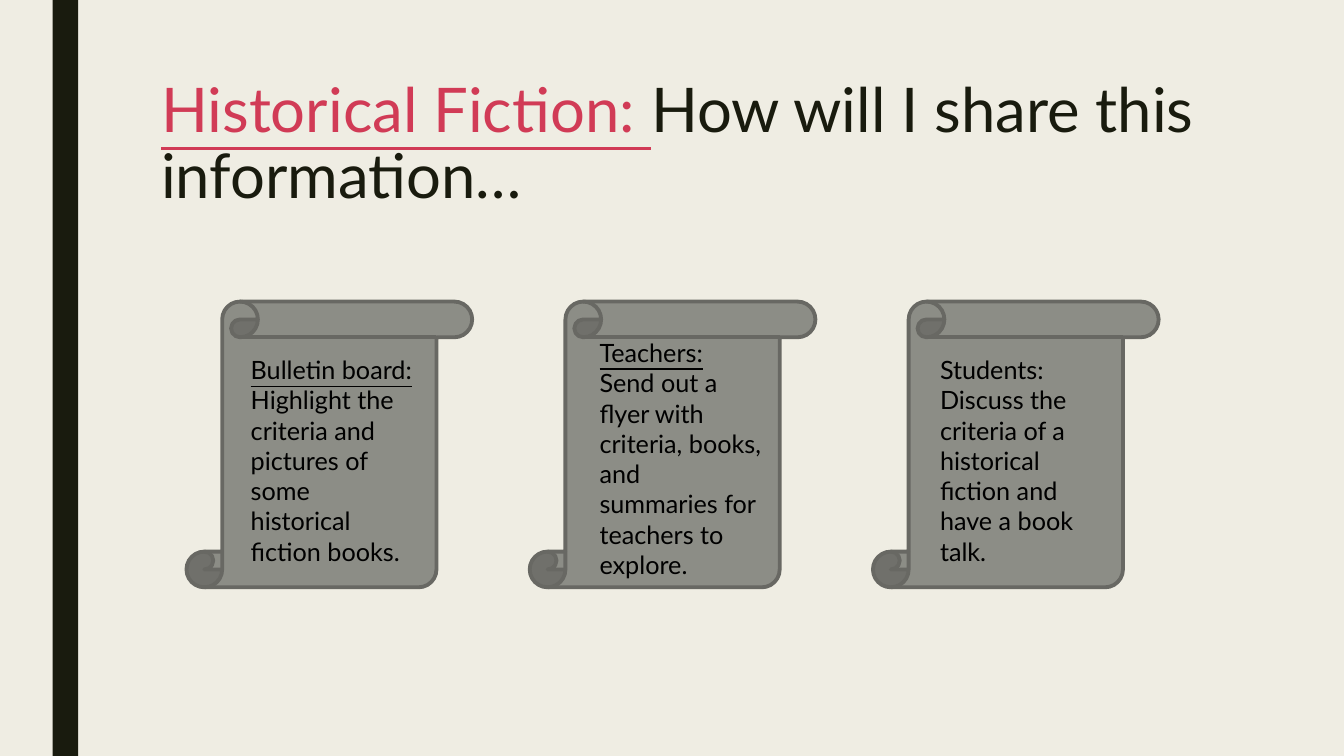
from pptx import Presentation
from pptx.dml.color import RGBColor
from pptx.enum.shapes import MSO_SHAPE
from pptx.enum.text import MSO_ANCHOR
from pptx.util import Cm, Pt

CREAM = RGBColor(0xEF, 0xED, 0xE3)
DARK = RGBColor(0x19, 0x1B, 0x0E)
RED = RGBColor(0xD1, 0x3B, 0x56)
GRAY = RGBColor(0x8C, 0x8D, 0x86)
EDGE = RGBColor(0x68, 0x68, 0x63)
BLACK = RGBColor(0, 0, 0)

SCROLL_LEFT, SCROLL_TOP, SCROLL_SIZE, SCROLL_STEP = 4.7, 7.6, 7.2, 8.65

# Heading, body, heading underlined, text box (left, top, width, height) in cm
IDEAS = [
    ("Bulletin board: ",
     "Highlight the criteria and pictures of some historical fiction books.",
     True, (6.07, 8.81, 4.67, 4.88)),
    ("Teachers: ",
     "Send out a flyer with criteria, books, and summaries for teachers to explore.",
     True, (14.86, 8.38, 4.6, 6.4)),
    ("Students: ",
     "Discuss the criteria of a historical fiction and have a book talk.",
     False, (23.44, 8.81, 4.5, 5.64)),
]


class SlideBuilder:
    font = "Lato"

    def __init__(self, slide):
        self.slide = slide
        fill = slide.background.fill
        fill.solid()
        fill.fore_color.rgb = CREAM

    def shape(self, kind, box, color, edge=None):
        sp = self.slide.shapes.add_shape(kind, *map(Cm, box))
        sp.shadow.inherit = False
        sp.fill.solid()
        sp.fill.fore_color.rgb = color
        if edge:
            sp.line.color.rgb = edge
            sp.line.width = Pt(2.75)
        else:
            sp.line.fill.background()

    def text(self, box, size, runs, spacing=None):
        """Add a wrapped text box; each run is (text, color, underlined)."""
        tf = self.slide.shapes.add_textbox(*map(Cm, box)).text_frame
        tf.word_wrap = True
        tf.vertical_anchor = MSO_ANCHOR.TOP
        p = tf.paragraphs[0]
        if spacing:
            p.line_spacing = spacing
        for text, color, underlined in runs:
            r = p.add_run()
            r.text = text
            r.font.name = self.font
            r.font.size = Pt(size)
            r.font.color.rgb = color
            r.font.underline = underlined


def main():
    prs = Presentation()
    prs.slide_width, prs.slide_height = Cm(33.87), Cm(19.05)
    s = SlideBuilder(prs.slides.add_slide(prs.slide_layouts[6]))

    s.shape(MSO_SHAPE.RECTANGLE, (1.33, 0, 0.64, 19.05), DARK)
    s.text((3.81, 1.9, 26.67, 4.11), 44,
           [("Historical Fiction: ", RED, True),
            ("How will I share this information…", DARK, False)], 0.89)

    for i, (heading, body, underlined, box) in enumerate(IDEAS):
        left = SCROLL_LEFT + i * SCROLL_STEP
        s.shape(MSO_SHAPE.VERTICAL_SCROLL,
                (left, SCROLL_TOP, SCROLL_SIZE, SCROLL_SIZE), GRAY, EDGE)
        s.text(box, 18, [(heading, BLACK, underlined), (body, BLACK, False)])

    prs.save("out.pptx")


if __name__ == "__main__":
    main()
